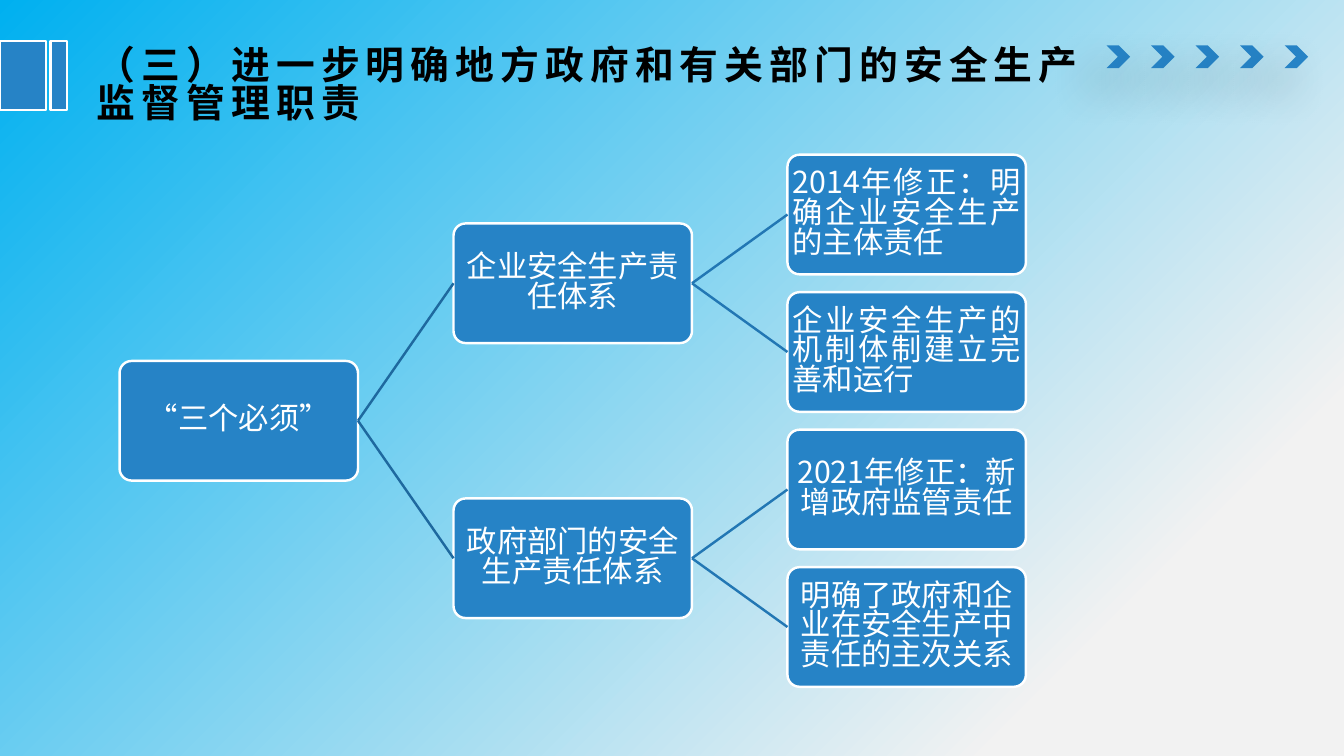
import pptx
import pptx.util
import pptx.dml.color
import pptx.enum.shapes
import pptx.enum.text
import pptx.oxml
import pptx.oxml.ns
from lxml import etree

WIDTH, HEIGHT = 15.4, 8.66
FONT = "Noto Sans CJK SC"
BLUE, WHITE, BLACK = "2683C6", "FFFFFF", "000000"
LINE_COLOURS = ["1E699F", "2277B4"]
SHAPES = pptx.enum.shapes.MSO_SHAPE
ALIGN = pptx.enum.text.PP_ALIGN
inches = pptx.util.Inches

TREE = ("“三个必须”", ALIGN.CENTER, [
    ("企业安全生产责任体系", ALIGN.CENTER, [
        ("2014年修正：明确企业安全生产的主体责任", ALIGN.JUSTIFY, []),
        ("企业安全生产的机制体制建立完善和运行", ALIGN.JUSTIFY, []),
    ]),
    ("政府部门的安全生产责任体系", ALIGN.CENTER, [
        ("2021年修正：新增政府监管责任", ALIGN.CENTER, []),
        ("明确了政府和企业在安全生产中责任的主次关系", ALIGN.CENTER, []),
    ]),
])


def colour(value):
    return pptx.dml.color.RGBColor.from_string(value)


def set_attributes(target, values):
    for name, value in values.items():
        setattr(target, name, value)


def write_text(shape, text, align, margins, size, ink, bold=False, spacing=0):
    """Fill a shape with one middle-anchored paragraph; spacing is in points."""
    frame = shape.text_frame
    set_attributes(frame, {
        "word_wrap": True,
        "vertical_anchor": pptx.enum.text.MSO_ANCHOR.MIDDLE,
        "margin_left": inches(margins[0]), "margin_right": inches(margins[0]),
        "margin_top": inches(margins[1]), "margin_bottom": inches(margins[1]),
    })
    paragraph = frame.paragraphs[0]
    paragraph.text = text
    set_attributes(paragraph, {"alignment": align, "line_spacing": 0.82})
    for run in paragraph.runs:
        set_attributes(run.font, {"size": pptx.util.Pt(size), "bold": bold, "name": FONT})
        run.font.color.rgb = colour(ink)
        properties = run._r.get_or_add_rPr()
        properties.set("spc", str(spacing * 100))
        etree.SubElement(properties, pptx.oxml.ns.qn("a:ea"), typeface=FONT)


def add_block(slide, kind, left, top, width, height, outlined=True):
    shape = slide.shapes.add_shape(
        kind, inches(left), inches(top), inches(width), inches(height))
    shape.shadow.inherit = False
    shape.fill.solid()
    shape.fill.fore_color.rgb = colour(BLUE)
    if outlined:
        shape.line.color.rgb = colour(WHITE)
        shape.line.width = pptx.util.Pt(2)
    else:
        shape.line.fill.background()
    return shape


def add_soft_shadow(shape):
    effects = shape._element.spPr.find(pptx.oxml.ns.qn("a:effectLst"))
    effects.append(pptx.oxml.parse_xml(
        f'<a:outerShdw {pptx.oxml.ns.nsdecls("a")} blurRad="{pptx.util.Pt(36)}" '
        f'dist="{pptx.util.Pt(24)}" dir="7800000" algn="tr" rotWithShape="0">'
        f'<a:srgbClr val="{BLACK}"><a:alpha val="38000"/></a:srgbClr></a:outerShdw>'))


def paint_background(slide):
    fill = slide.background.fill
    fill.gradient()
    fill.gradient_angle = 315
    for stop, position, value in zip(fill.gradient_stops, (0, 0.83), ("00B0F0", "F2F2F2")):
        stop.position = position
        stop.color.rgb = colour(value)


def add_header(slide, left, top, width, height):
    """Place the side bars, the title and the row of chevrons in a band."""
    for offset, bar_width in ((0, 0.53), (0.58, 0.19)):
        add_block(slide, SHAPES.RECTANGLE, left + offset, top, bar_width, 0.79)
    for index in range(5):
        chevron = add_block(slide, SHAPES.CHEVRON, left + width - 2.72 + index * 0.51,
                            top + 0.05, 0.27, 0.26, outlined=False)
        add_soft_shadow(chevron)
    title = slide.shapes.add_textbox(
        inches(left + 0.97), inches(top), inches(11.86), inches(height))
    write_text(title, "（三）进一步明确地方政府和有关部门的安全生产\v监督管理职责",
               ALIGN.LEFT, (0.14, 0.07), 32, BLACK, bold=True, spacing=5)


def count_leaves(node):
    return sum(map(count_leaves, node[2])) or 1


def join(slide, parent, child, ink):
    connector = slide.shapes.add_connector(
        pptx.enum.shapes.MSO_CONNECTOR.STRAIGHT, 0, 0, 0, 0)
    connector.begin_connect(parent, 3)
    connector.end_connect(child, 1)
    connector.line.color.rgb = colour(ink)
    connector.line.width = pptx.util.Pt(2)
    etree.SubElement(connector._element.spPr, pptx.oxml.ns.qn("a:effectLst"))


def add_tree(slide, node, left, top, width, height, level=0):
    """Draw a node centred in its band and its children in the columns after it."""
    text, align, children = node
    column = width / 3
    row = height / count_leaves(node)
    box_width, box_height = column * 0.714, row * 0.87
    box = add_block(slide, SHAPES.ROUNDED_RECTANGLE, left,
                    top + (height - box_height) / 2, box_width, box_height)
    box.adjustments[0] = 0.1
    write_text(box, text, align, (0.02, 0.02), 25, WHITE)
    for child in children:
        child_height = row * count_leaves(child)
        child_box = add_tree(slide, child, left + column, top, width, child_height, level + 1)
        join(slide, box, child_box, LINE_COLOURS[level])
        top += child_height
    return box


def main():
    presentation = pptx.Presentation()
    set_attributes(presentation, {"slide_width": inches(WIDTH), "slide_height": inches(HEIGHT)})
    slide = presentation.slides.add_slide(presentation.slide_layouts[6])
    paint_background(slide)
    add_header(slide, 0, 0.47, WIDTH, 1.06)
    add_tree(slide, TREE, 1.37, 1.67, 11.48, 6.3)
    presentation.save("out.pptx")


if __name__ == "__main__":
    main()
